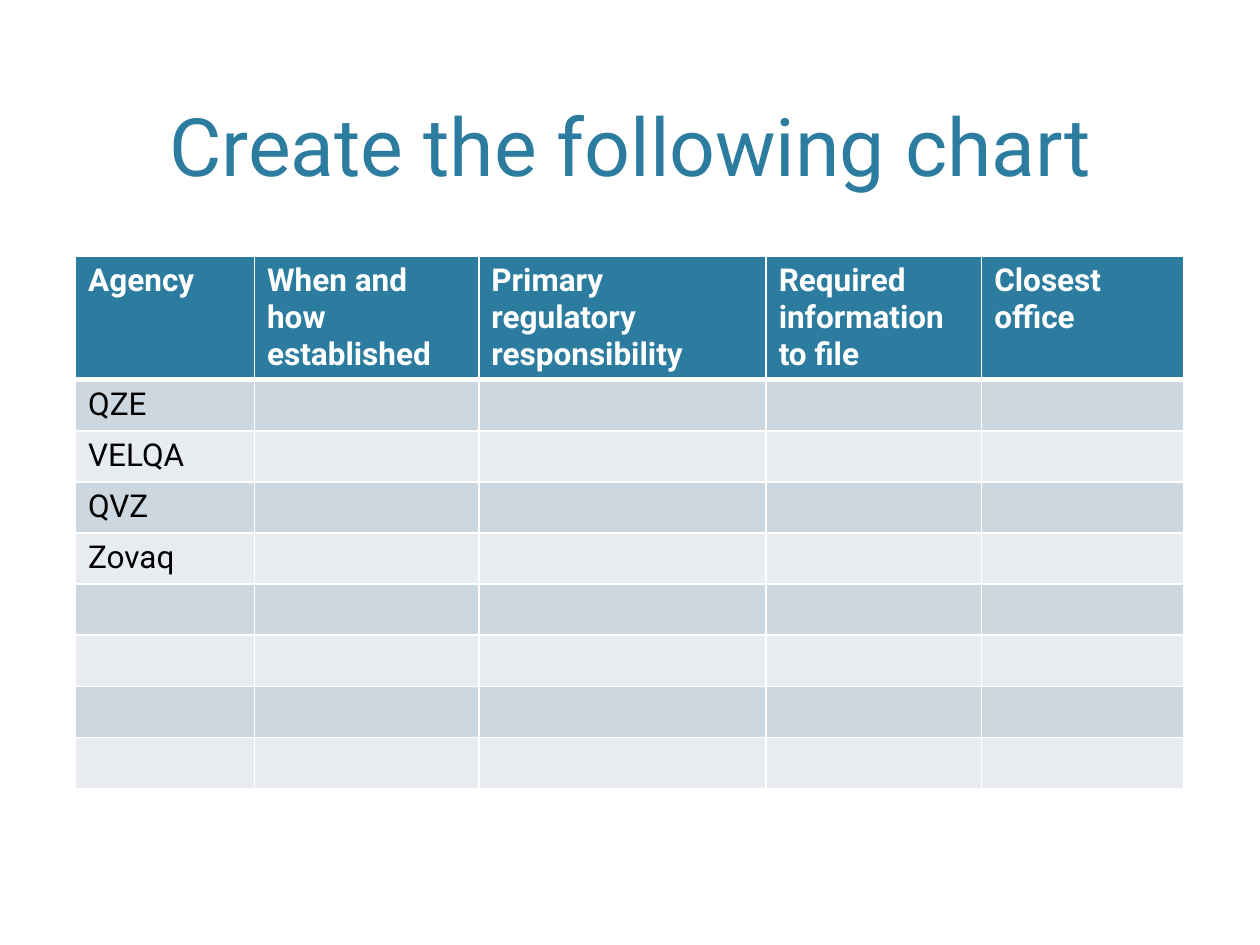
from lxml import etree
from pptx import Presentation
from pptx.dml.color import RGBColor
from pptx.enum import text
from pptx.oxml import ns
from pptx.util import Pt

TEAL = RGBColor(0x2C, 0x7C, 0x9F)
WHITE = RGBColor(0xFF, 0xFF, 0xFF)
BLACK = RGBColor(0, 0, 0)
BANDS = (RGBColor(0xCD, 0xD7, 0xDF), RGBColor(0xE8, 0xEC, 0xF0))
FONT = "Roboto"

HEADERS = ("Agency", "When and how established", "Primary regulatory responsibility",
           "Required information to file", "Closest office")
AGENCIES = ("QZE", "VELQA", "QVZ", "Zovaq")
BODY_ROWS = 8
COLUMN_SHARES = (1.42, 1.78, 2.28, 1.71, 1.6)
HEADER_HEIGHT, ROW_HEIGHT = 70.2, 29.2
THIN, THICK = 1, 3


def format_text(paragraph, size, color, bold=False):
    for run in paragraph.runs:
        run.font.name = FONT
        run.font.size = Pt(size)
        run.font.bold = bold
        run.font.color.rgb = color


def set_borders(cell, top, bottom):
    properties = cell._tc.get_or_add_tcPr()
    for side, width in (("L", THIN), ("R", THIN), ("T", top), ("B", bottom)):
        line = etree.SubElement(properties, ns.qn(f"a:ln{side}"), w=str(Pt(width)))
        fill = etree.SubElement(line, ns.qn("a:solidFill"))
        etree.SubElement(fill, ns.qn("a:srgbClr"), val=str(WHITE))


def fill_title(slide, left, top, width, height):
    title = slide.shapes.title
    title.left, title.top = Pt(left), Pt(top)
    title.width, title.height = Pt(width), Pt(height)
    frame = title.text_frame
    frame.text = "Create the following chart"
    frame.vertical_anchor = text.MSO_ANCHOR.BOTTOM
    paragraph = frame.paragraphs[0]
    paragraph.alignment = text.PP_ALIGN.CENTER
    format_text(paragraph, 46, TEAL)


def add_agency_table(slide, left, top, width):
    height = HEADER_HEIGHT + BODY_ROWS * ROW_HEIGHT
    table = slide.shapes.add_table(BODY_ROWS + 1, len(HEADERS), Pt(left), Pt(top),
                                   Pt(width), Pt(height)).table
    for column, share in zip(table.columns, COLUMN_SHARES):
        column.width = Pt(width * share / sum(COLUMN_SHARES))
    for index, row in enumerate(table.rows):
        is_header = index == 0
        row.height = Pt(HEADER_HEIGHT if is_header else ROW_HEIGHT)
        for cell in row.cells:
            set_borders(cell, THICK if index == 1 else THIN, THICK if is_header else THIN)
            cell.fill.solid()
            cell.fill.fore_color.rgb = TEAL if is_header else BANDS[(index - 1) % 2]
    for cell, header in zip(table.rows[0].cells, HEADERS):
        cell.text_frame.text = header
        format_text(cell.text_frame.paragraphs[0], 18, WHITE, bold=True)
    for index, agency in enumerate(AGENCIES, start=1):
        frame = table.cell(index, 0).text_frame
        frame.text = agency
        format_text(frame.paragraphs[0], 18, BLACK)


def main():
    presentation = Presentation()
    presentation.slide_width, presentation.slide_height = Pt(720), Pt(540)
    slide = presentation.slides.add_slide(presentation.slide_layouts.get_by_name("Title Only"))
    fill_title(slide, 43.2, 8.64, 633.6, 105.12)
    add_agency_table(slide, 43.2, 146.4, 633)
    presentation.save("out.pptx")


if __name__ == "__main__":
    main()
